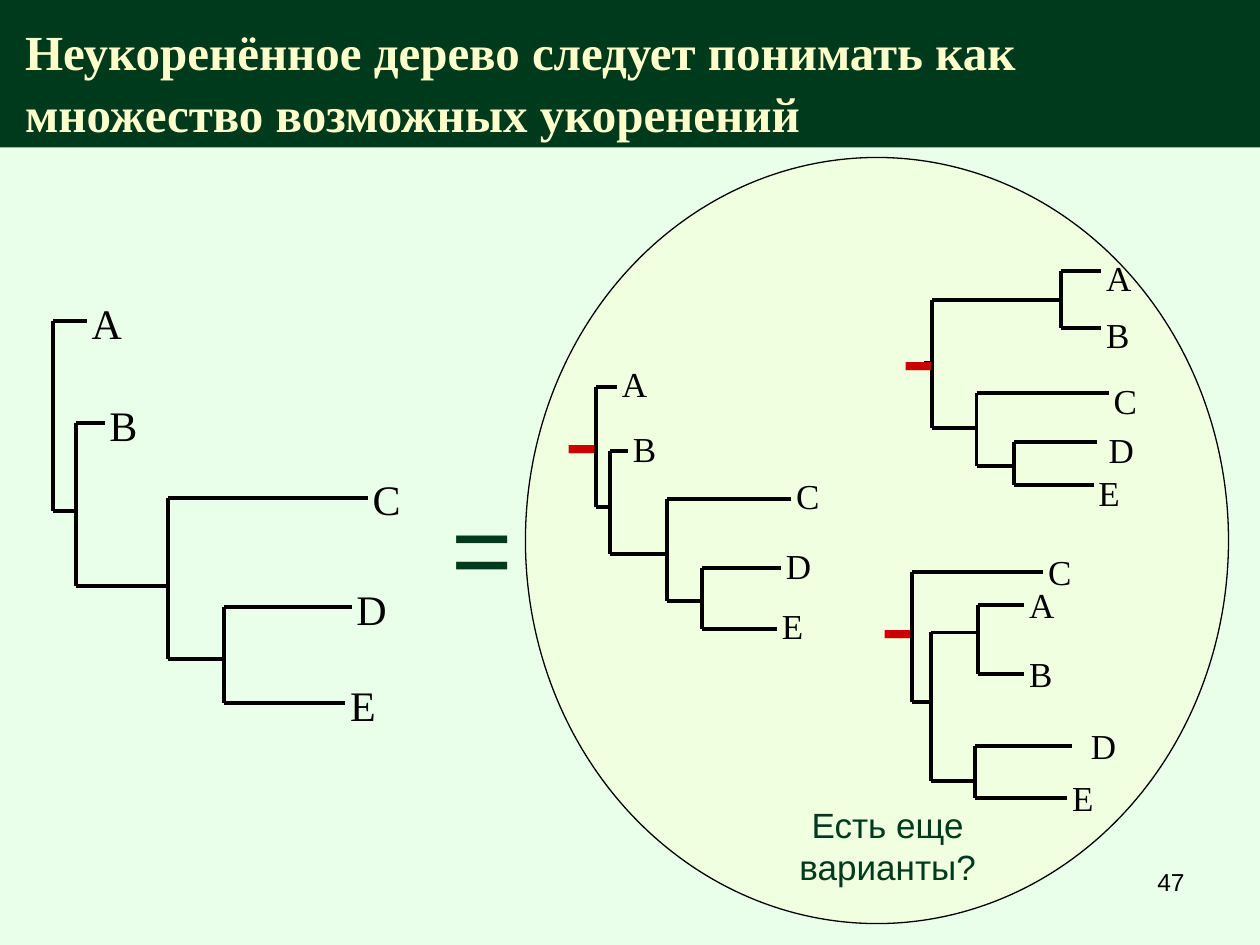
from dataclasses import dataclass

from pptx import Presentation
from pptx.dml.color import RGBColor
from pptx.enum.shapes import MSO_CONNECTOR as CONN, MSO_SHAPE as SHAPE
from pptx.enum.text import MSO_ANCHOR as ANCHOR, PP_ALIGN as ALIGN
from pptx.oxml.ns import qn
from pptx.util import Inches, Pt

GREEN, CREAM, MINT, RED, BLACK = "003A1C", "FFFFCC", "E9FFE9", "CC0000", "000000"
SERIF, SANS = "Times New Roman", "Arial"


@dataclass
class Leaf:
    """Tip of a branch, in percent of the tree's box; dx shifts its label in inches."""
    name: str
    x: float
    y: float
    dx: float = -0.06


@dataclass
class Fork:
    """Branching point: its stem arrives at (x, y), in percent of the tree's box."""
    x: float
    y: float
    top: object
    bottom: object


ROOTED_AT_A = Fork(0, 25, Leaf("A", 10.8, 0),
                   Fork(7.2, 49.8, Leaf("B", 16.4, 26.7),
                        Fork(36.4, 69.3, Leaf("C", 100, 46.2),
                             Fork(54.4, 88.4, Leaf("D", 94.8, 74.9),
                                  Leaf("E", 92.8, 100)))))
ROOTED_AT_AB = Fork(0, 43.5,
                    Fork(72.9, 13.5, Leaf("A", 95.7, 0), Leaf("B", 95.7, 26.5)),
                    Fork(25, 73.5, Leaf("C", 100, 57),
                         Fork(46.4, 91.2, Leaf("D", 93.6, 80, -0.01),
                              Leaf("E", 91.4, 100))))
ROOTED_AT_C = Fork(0, 26.8, Leaf("C", 81.9, 0),
                   Fork(11.8, 57.5,
                        Fork(40.9, 26.8, Leaf("A", 70.1, 14.5), Leaf("B", 70.1, 45.3)),
                        Fork(39.4, 92.7, Leaf("D", 100, 77.1, 0.05),
                             Leaf("E", 96.9, 100))))


def rgb(color):
    return RGBColor.from_string(color)


def write(tf, text, font=SANS, size=20, color=BLACK, bold=False, align=ALIGN.LEFT,
          anchor=ANCHOR.TOP, wrap=False, spacing=None):
    tf.word_wrap = wrap
    tf.vertical_anchor = anchor
    p = tf.paragraphs[0]
    p.text = text
    p.alignment = align
    p.line_spacing = spacing
    for r in p.runs:
        r.font.name, r.font.size, r.font.bold = font, Pt(size), bold
        r.font.color.rgb = rgb(color)


def add_text(s, box, text, **fmt):
    sp = s.shapes.add_textbox(*map(Inches, box))
    write(sp.text_frame, text, **fmt)


def add_centered(s, box, text, **fmt):
    add_text(s, box, text, align=ALIGN.CENTER, anchor=ANCHOR.MIDDLE, **fmt)


def add_line(s, start, end, width=2.25):
    line = s.shapes.add_connector(CONN.STRAIGHT, *map(Inches, (*start, *end)))
    line.line.color.rgb = rgb(BLACK)
    line.line.width = Pt(width)
    sp_pr = line._element.spPr
    sp_pr.append(sp_pr.makeelement(qn("a:effectLst"), {}))


def add_title(s, box, text):
    sp = s.shapes.title
    sp.left, sp.top, sp.width, sp.height = map(Inches, box)
    sp.fill.solid()
    sp.fill.fore_color.rgb = rgb(GREEN)
    tf = sp.text_frame
    tf.margin_left, tf.margin_right = Inches(0.2), Inches(0.1)
    tf.margin_top, tf.margin_bottom = Inches(0.1), 0
    write(tf, text, font=SERIF, size=28, color=CREAM, bold=True,
          anchor=ANCHOR.MIDDLE, wrap=True, spacing=1.06)


def add_oval(s, box):
    sp = s.shapes.add_shape(SHAPE.OVAL, *map(Inches, box))
    sp.shadow.inherit = False
    sp.fill.solid()
    sp.fill.fore_color.rgb = rgb(CREAM)
    color = sp._element.spPr.find(qn("a:solidFill"))[0]
    color.append(color.makeelement(qn("a:alpha"), {"val": "31000"}))
    sp.line.color.rgb = rgb(BLACK)
    sp.line.width = Pt(0.75)


def add_tree(s, box, root, size=20, label_dy=-0.24, marked=True):
    left, top, width, height = box

    def place(x, y):
        return left + width * x / 100, top + height * y / 100

    def draw(node):
        x, y = place(node.x, node.y)
        if isinstance(node, Leaf):
            label = (x + node.dx, y + label_dy, 0.4, size / 60 + 0.1)
            add_text(s, label, node.name, font=SERIF, size=size)
            return
        add_line(s, place(node.x, node.top.y), place(node.x, node.bottom.y))
        for child in (node.top, node.bottom):
            add_line(s, place(node.x, child.y), place(child.x, child.y))
            draw(child)

    draw(root)
    if marked:
        x, y = place(root.x, root.y)
        add_line(s, (x, y), (x - 0.07, y), width=3)
        add_centered(s, (x - 0.4, y - 0.22, 0.58, 0.25), "-", size=60, color=RED)


def main():
    prs = Presentation()
    prs.slide_width, prs.slide_height = Inches(10), Inches(7.5)
    s = prs.slides.add_slide(prs.slide_layouts[5])
    s.background.fill.solid()
    s.background.fill.fore_color.rgb = rgb(MINT)

    add_title(s, (0, 0, 10, 1.17),
              "Неукоренённое дерево следует понимать как\vмножество возможных укоренений")
    add_oval(s, (4.17, 1.25, 5.58, 6.08))
    add_tree(s, (0.42, 2.55, 2.5, 3.03), ROOTED_AT_A, size=24, marked=False)
    add_centered(s, (3.33, 4.08, 1, 0.5), "=", size=60, color=GREEN)
    add_tree(s, (4.73, 3.07, 1.55, 1.92), ROOTED_AT_A)
    add_tree(s, (7.4, 2.15, 1.4, 1.7), ROOTED_AT_AB, label_dy=-0.16)
    add_tree(s, (7.24, 4.54, 1.27, 1.79), ROOTED_AT_C, label_dy=-0.22)
    add_centered(s, (5.67, 6.42, 2.75, 0.58), "Есть еще варианты?", color=GREEN)
    add_text(s, (7.17, 6.83, 2.33, 0.52), "47", size=14, align=ALIGN.RIGHT, wrap=True)
    prs.save("out.pptx")


if __name__ == "__main__":
    main()
